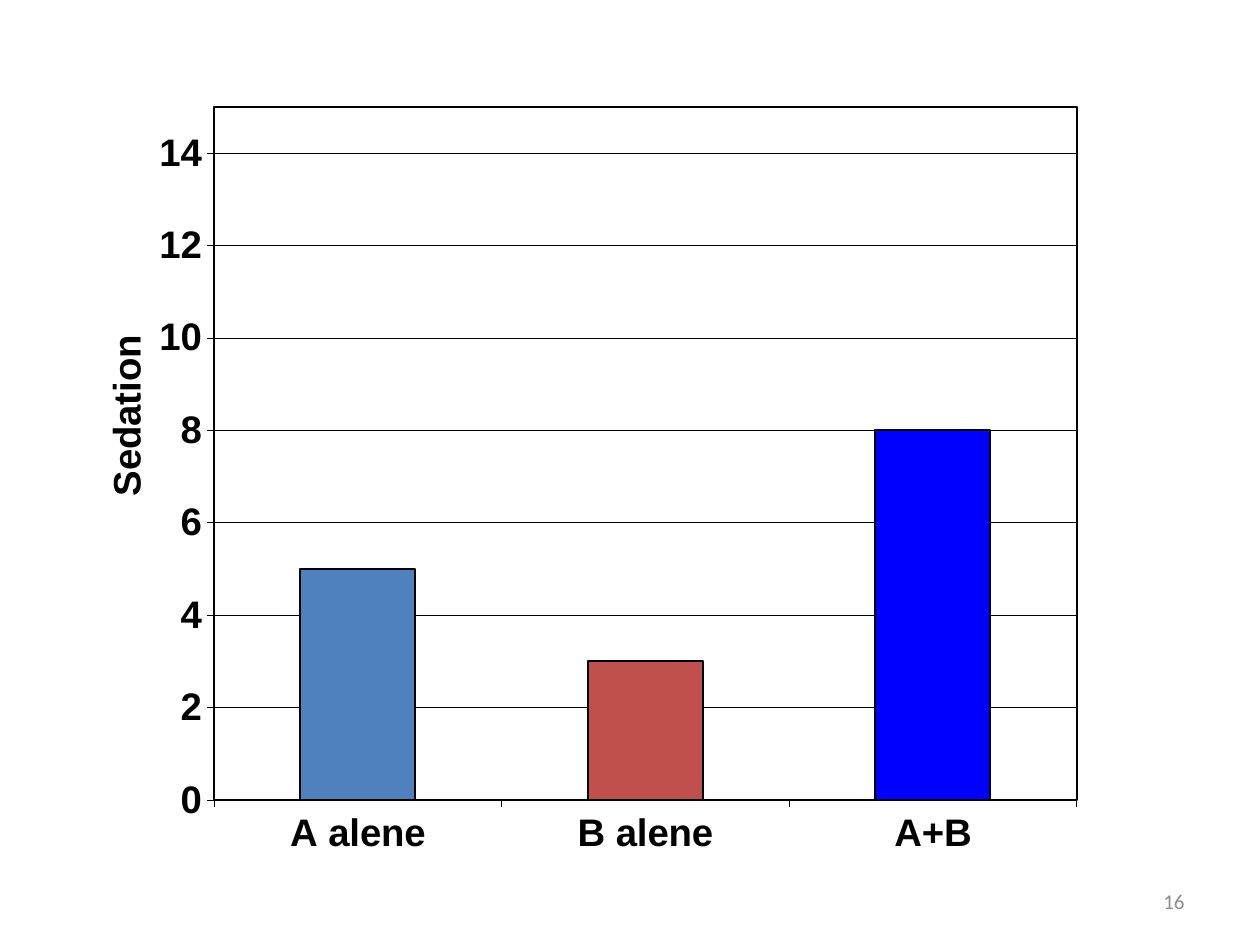
"""Build a slide with a column chart of sedation for A, B and A+B."""
import pptx
import pptx.chart.data
import pptx.dml.color
import pptx.enum.chart
import pptx.enum.text
import pptx.oxml
import pptx.oxml.ns
import pptx.util

Inches = pptx.util.Inches
Pt = pptx.util.Pt
RGBColor = pptx.dml.color.RGBColor

BLACK = RGBColor(0x00, 0x00, 0x00)
GREY = RGBColor(0x8C, 0x8C, 0x8C)
SERIES_COLORS = [
    RGBColor(0x4F, 0x81, 0xBD),
    RGBColor(0xC0, 0x50, 0x4D),
    RGBColor(0x00, 0x00, 0xFF),
]
NAMESPACES = pptx.oxml.ns.nsdecls("c", "a")


def manual_layout(target, **edges):
    parts = f'<c:layoutTarget val="{target}"/>' if target else ""
    parts += "".join(f'<c:{name}Mode val="edge"/>' for name in "xy")
    parts += "".join(f'<c:{name} val="{value}"/>' for name, value in edges.items())
    return pptx.oxml.parse_xml(
        f"<c:layout {NAMESPACES}><c:manualLayout>{parts}</c:manualLayout></c:layout>"
    )


def style_font(font, size, name, color, bold):
    font.size = Pt(size)
    font.name = name
    font.color.rgb = color
    font.bold = bold


deck = pptx.Presentation()
deck.slide_width = Inches(10)
deck.slide_height = Inches(7.5)
page = deck.slides.add_slide(deck.slide_layouts[6])

number_box = page.shapes.add_textbox(Inches(7.17), Inches(6.95), Inches(2.33), Inches(0.4))
number_box.text_frame.word_wrap = True
number_box.text_frame.vertical_anchor = pptx.enum.text.MSO_ANCHOR.MIDDLE
para = number_box.text_frame.paragraphs[0]
para.alignment = pptx.enum.text.PP_ALIGN.RIGHT
span = para.add_run()
span.text = "16"
style_font(span.font, 12, "Calibri", GREY, False)

sedation = pptx.chart.data.CategoryChartData()
sedation.categories = ["A alene", "B alene", "A+B"]
for number, values in enumerate([(5, 0, 0), (0, 3, 0), (None, None, 8)], start=1):
    sedation.add_series(f"Series {number}", values)

chart = page.shapes.add_chart(
    pptx.enum.chart.XL_CHART_TYPE.COLUMN_STACKED,
    Inches(0.51), Inches(0.29), Inches(8.15), Inches(7.24), sedation,
).chart
chart.has_legend = False
chart.has_title = False
style_font(chart.font, 21.9, "Arial", BLACK, True)

plot = chart.plots[0]
plot.gap_width = 150
plot.overlap = 100
plot.vary_by_categories = False
for series, color in zip(plot.series, SERIES_COLORS):
    series.format.fill.solid()
    series.format.fill.fore_color.rgb = color
    series.format.line.color.rgb = BLACK
    series.format.line.width = Pt(1.22)

value_axis = chart.value_axis
value_axis.minimum_scale = 0
value_axis.maximum_scale = 15
value_axis.major_unit = 2
value_axis.has_major_gridlines = True
for axis in (chart.category_axis, value_axis):
    axis.major_tick_mark = pptx.enum.chart.XL_TICK_MARK.OUTSIDE
    axis.minor_tick_mark = pptx.enum.chart.XL_TICK_MARK.NONE
    style_font(axis.tick_labels.font, 21.9, "Arial", BLACK, True)
for line in (
    chart.category_axis.format.line,
    value_axis.format.line,
    value_axis.major_gridlines.format.line,
):
    line.color.rgb = BLACK
    line.width = Pt(0.3)

title = value_axis.axis_title
span = title.text_frame.paragraphs[0].add_run()
span.text = "Sedation"
style_font(span.font, 21.9, "Arial", BLACK, True)
title.text_frame._txBody.bodyPr.set("rot", "-5400000")
title.text_frame._txBody.bodyPr.set("vert", "horz")
for old_layout in title._element.findall(pptx.oxml.ns.qn("c:layout")):
    title._element.remove(old_layout)
title._element.find(pptx.oxml.ns.qn("c:tx")).addnext(manual_layout("", x=0.03, y=0.32))

plot_area = chart._chartSpace.chart.plotArea
for old_layout in plot_area.findall(pptx.oxml.ns.qn("c:layout")):
    plot_area.remove(old_layout)
plot_area.insert(0, manual_layout("inner", x=0.146, y=0.077, w=0.84, h=0.76))
plot_area.append(pptx.oxml.parse_xml(
    f'<c:spPr {NAMESPACES}><a:noFill/><a:ln w="{Pt(1.22)}"><a:solidFill>'
    f'<a:srgbClr val="{BLACK}"/></a:solidFill></a:ln></c:spPr>'
))

deck.save("out.pptx")
